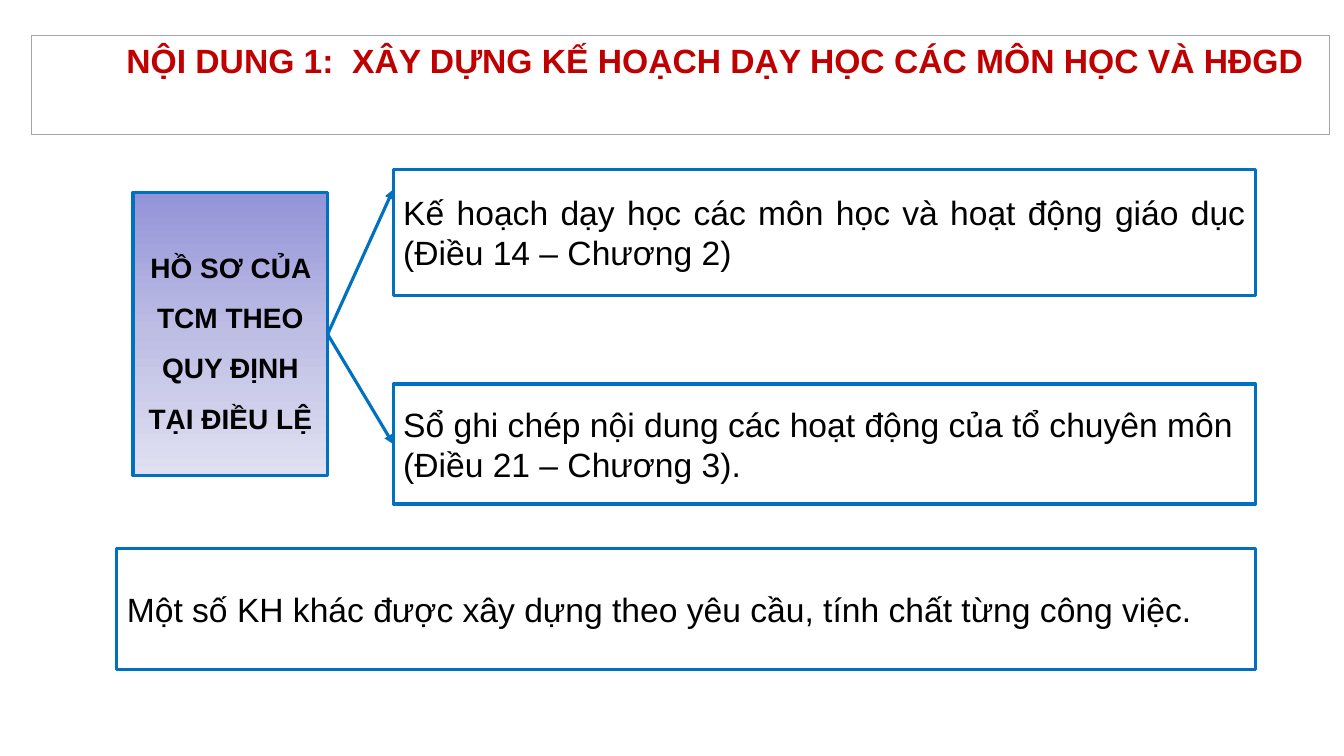
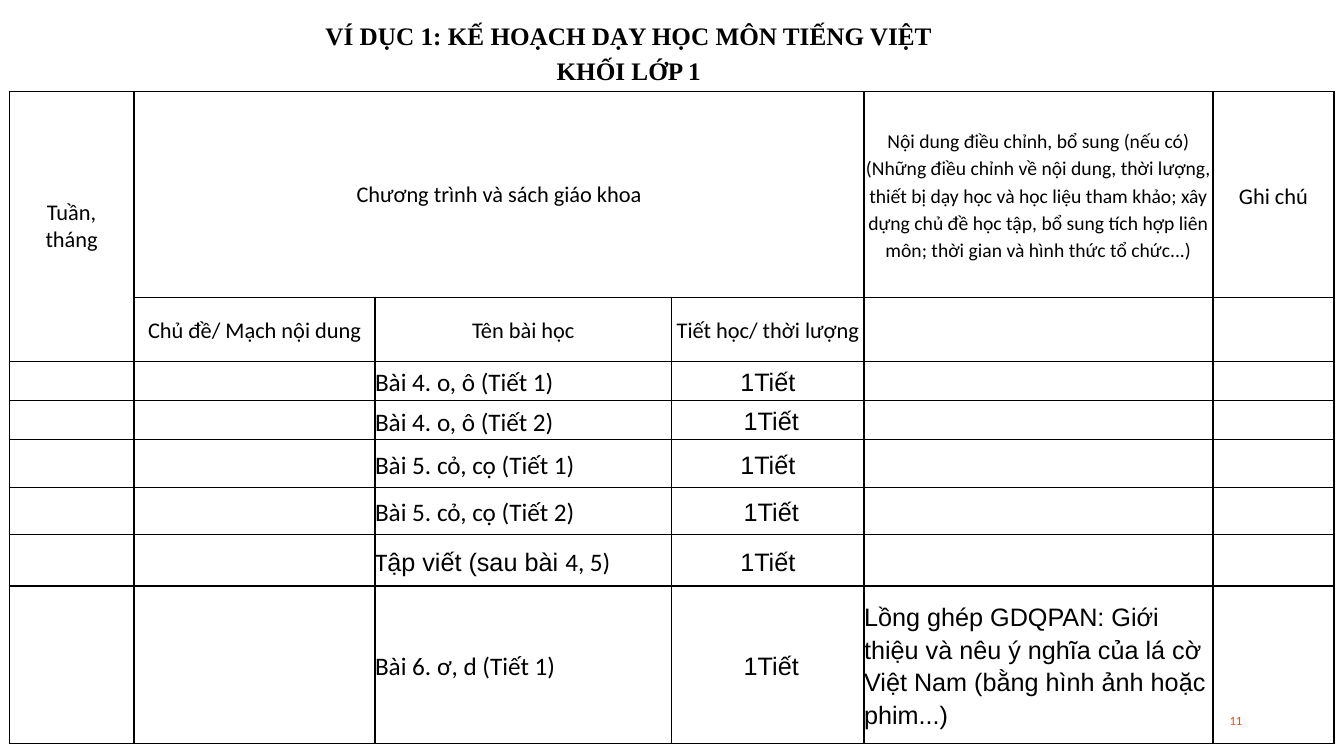
from copy import deepcopy
from dataclasses import dataclass

from lxml.etree import SubElement
from pptx import Presentation
from pptx.dml.color import RGBColor
from pptx.enum.shapes import MSO_CONNECTOR, MSO_SHAPE
from pptx.enum.text import MSO_ANCHOR, PP_ALIGN
from pptx.oxml.ns import qn
from pptx.util import Inches, Pt

LEFT, MID, RIGHT, EVEN = PP_ALIGN.LEFT, PP_ALIGN.CENTER, PP_ALIGN.RIGHT, PP_ALIGN.JUSTIFY


@dataclass(frozen=True)
class Theme:
    wide: float = 13.33
    high: float = 7.5
    sans: str = "Arial"
    table: str = "Calibri"
    serif: str = "Times New Roman"
    ink: str = "000000"
    paper: str = "FFFFFF"
    blue: str = "0070C0"
    gray: str = "A5A5A5"
    red: str = "C00000"
    orange: str = "DF5327"
    fade: tuple = ("9393D8", "BEBEE5", "E0E0F2")
    head: int = 24
    label: int = 20
    lesson: int = 18
    cell: int = 16
    note: int = 14
    tiny: int = 9
    edge: float = 2.25
    hair: float = 0.5
    rule: float = 1


def tint(code):
    return RGBColor.from_string(code)


class Deck:
    def __init__(self, theme):
        self.theme = theme
        self.show = Presentation()
        self.show.slide_width = Inches(theme.wide)
        self.show.slide_height = Inches(theme.high)
        self.slide = None

    def page(self):
        self.slide = self.show.slides.add_slide(self.show.slide_layouts[6])

    def across(self, share):
        return Inches(self.theme.wide * share / 100)

    def down(self, share):
        return Inches(self.theme.high * share / 100)

    def place(self, area):
        x, y, w, h = area
        return self.across(x), self.down(y), self.across(w), self.down(h)

    def typeset(self, frame, lines, size, font=None, color=None, bold=False,
                align=MID, space=None, before=None, after=None):
        frame.word_wrap = True
        for i, line in enumerate(lines):
            para = frame.paragraphs[0] if i == 0 else frame.add_paragraph()
            para.alignment = align
            if space:
                para.line_spacing = space
            if before is not None:
                para.space_before = Pt(before)
            if after is not None:
                para.space_after = Pt(after)
            runs = [(line, font)] if isinstance(line, str) else line
            for words, face in runs:
                for j, part in enumerate(words.split("\n")):
                    if j:
                        para.add_line_break()
                    run = para.add_run()
                    run.text = part
                    run.font.size = Pt(size)
                    run.font.name = face or self.theme.sans
                    run.font.bold = bold
                    run.font.color.rgb = tint(color or self.theme.ink)

    def box(self, area, lines, size=None, line=None, edge=None, anchor=MSO_ANCHOR.MIDDLE,
            align=EVEN, **style):
        look = self.theme
        shape = self.slide.shapes.add_shape(MSO_SHAPE.RECTANGLE, *self.place(area))
        shape.shadow.inherit = False
        shape.fill.solid()
        shape.fill.fore_color.rgb = tint(look.paper)
        shape.line.color.rgb = tint(line or look.blue)
        shape.line.width = Pt(edge or look.edge)
        shape.text_frame.vertical_anchor = anchor
        self.typeset(shape.text_frame, lines, size or look.head, align=align, **style)
        return shape

    def shade(self, shape):
        fill = shape.fill
        fill.gradient()
        fill.gradient_angle = 270
        stops = shape._element.spPr.find(qn("a:gradFill")).find(qn("a:gsLst"))
        stops.insert(1, deepcopy(stops[0]))
        for stop, code, spot in zip(fill.gradient_stops, self.theme.fade, (0, 0.5, 1)):
            stop.color.rgb = tint(code)
            stop.position = spot

    def title(self, area, words):
        look = self.theme
        shape = self.box(area, [words], line=look.gray, edge=look.hair,
                         anchor=MSO_ANCHOR.TOP, align=MID, color=look.red, bold=True)
        props = shape.text_frame.paragraphs[0]._p.get_or_add_pPr()
        props.set("marL", str(Inches(0.18)))
        props.set("indent", str(Inches(0.5)))

    def text(self, area, lines, size, anchor=MSO_ANCHOR.TOP, **style):
        frame = self.slide.shapes.add_textbox(*self.place(area)).text_frame
        frame.vertical_anchor = anchor
        self.typeset(frame, lines, size, **style)

    def arrow(self, start, spot, goal=None):
        x, y = self.across(spot[0]), self.down(spot[1])
        link = self.slide.shapes.add_connector(MSO_CONNECTOR.STRAIGHT, x, y, x, y)
        link.begin_connect(start, 3)
        if goal is not None:
            link.end_connect(goal, 1)
        link.line.color.rgb = tint(self.theme.blue)
        link.line.width = Pt(self.theme.edge)
        SubElement(link.line._get_or_add_ln(), qn("a:tailEnd"), type="triangle")
        SubElement(link._element.spPr, qn("a:effectLst"))

    def border(self, cell):
        props = cell._tc.get_or_add_tcPr()
        for i, side in enumerate(("a:lnL", "a:lnR", "a:lnT", "a:lnB")):
            line = props.makeelement(qn(side), {"w": str(Pt(self.theme.rule))})
            props.insert(i, line)
            paint = SubElement(line, qn("a:solidFill"))
            SubElement(paint, qn("a:srgbClr"), val=self.theme.ink)

    def grid(self, spot, cols, rows):
        area = (*spot, sum(cols), sum(rows))
        table = self.slide.shapes.add_table(len(rows), len(cols), *self.place(area)).table
        table.first_row = table.horz_banding = False
        for col, share in zip(table.columns, cols):
            col.width = self.across(share)
        for row, share in zip(table.rows, rows):
            row.height = self.down(share)
        for cell in table.iter_cells():
            cell.fill.background()
            cell.vertical_anchor = MSO_ANCHOR.MIDDLE
            cell.margin_left = cell.margin_right = cell.margin_top = cell.margin_bottom = 0
            self.border(cell)
        return table

    def entry(self, cell, words, size, font=None, align=MID, before=6):
        self.typeset(cell.text_frame, [words], size, font=font or self.theme.table,
                     align=align, space=1.15, before=before, after=10)

    def span(self, first, last, words):
        first.merge(last)
        first.margin_left = first.margin_right = Inches(0.1)
        first.margin_top = first.margin_bottom = Inches(0.05)
        self.typeset(first.text_frame, [words], self.theme.cell, font=self.theme.table)


def files(deck):
    look = deck.theme
    deck.page()
    left, edge = 29.26, 93.4
    plan = (left, 22.4, edge - left, 16.67)
    deck.box(plan, ["Kế hoạch dạy học các môn học và hoạt động giáo dục (Điều 14 – Chương 2)"])
    book = deck.box((left, 50.8, edge - left, 15.87),
                    ["Sổ ghi chép nội dung các hoạt động của tổ chuyên môn",
                     "(Điều 21 – Chương 3)."])
    root = deck.box((9.9, 25.47, 14.48, 37.47), ["HỒ SƠ CỦA TCM THEO QUY ĐỊNH TẠI ĐIỀU LỆ"],
                    look.label, align=MID, bold=True, space=1.5)
    deck.shade(root)
    deck.arrow(root, (left, 25.07))
    deck.arrow(root, (left, 58.73), book)
    deck.box((8.7, 72.53, edge - 8.7, 16),
             ["Một số KH khác được xây dựng theo yêu cầu, tính chất từng công việc."])
    deck.title((2.33, 4.67, 96.62, 13.07),
               "NỘI DUNG 1:  XÂY DỰNG KẾ HOẠCH DẠY HỌC CÁC MÔN HỌC VÀ HĐGD")


def lessons(deck):
    look = deck.theme
    deck.page()
    deck.text((70.67, 92.67, 22.5, 5.33), ["11"], look.tiny, anchor=MSO_ANCHOR.MIDDLE,
              font=look.table, color=look.orange, align=RIGHT)
    table = deck.grid((0.68, 12.13), (9.3, 17.93, 22.06, 14.33, 25.96, 9),
                      (27.2, 8.27, 5.2, 5.2, 6.27, 6.27, 6.8, 20.8))
    deck.span(table.cell(0, 0), table.cell(1, 0), "Tuần, tháng")
    deck.span(table.cell(0, 1), table.cell(0, 3), "Chương trình và sách giáo khoa")
    deck.entry(table.cell(0, 4),
               "Nội dung điều chỉnh, bổ sung (nếu có)\n(Những điều chỉnh về nội dung, "
               "thời lượng, thiết bị dạy học và học liệu tham khảo; xây dựng chủ đề học tập, "
               "bổ sung tích hợp liên môn; thời gian và hình thức tổ chức...)", look.note)
    deck.entry(table.cell(0, 5), "Ghi chú", look.cell)
    heads = ("Chủ đề/ Mạch nội dung", "Tên bài học", "Tiết học/ thời lượng")
    for col, words in enumerate(heads, 1):
        deck.entry(table.cell(1, col), words, look.cell)
    names = ("Bài 4. o, ô (Tiết 1)", "Bài 4. o, ô (Tiết 2)",
             "Bài 5. cỏ, cọ (Tiết 1)", "Bài 5. cỏ, cọ (Tiết 2)",
             [("T", look.table), ("ập viết (sau bài ", look.sans), ("4, 5)", look.table)],
             "Bài 6. ơ, d (Tiết 1)")
    for row, words in enumerate(names, 2):
        deck.entry(table.cell(row, 2), words, look.lesson, align=LEFT)
        deck.entry(table.cell(row, 3), " 1Tiết" if row % 2 else "1Tiết", look.lesson,
                   look.sans, before=0)
    deck.entry(table.cell(7, 4),
               "Lồng ghép GDQPAN: Giới thiệu và nêu ý nghĩa của lá cờ Việt Nam "
               "(bằng hình ảnh hoặc phim...)", look.lesson, look.sans, LEFT)
    deck.text((21.76, 1.47, 50.04, 10.67),
              ["VÍ DỤC 1: KẾ HOẠCH DẠY HỌC MÔN TIẾNG VIỆT", "KHỐI LỚP 1"],
              look.lesson, font=look.serif, bold=True, space=1.15)


def main():
    deck = Deck(Theme())
    files(deck)
    lessons(deck)
    deck.show.save("out.pptx")


if __name__ == "__main__":
    main()
